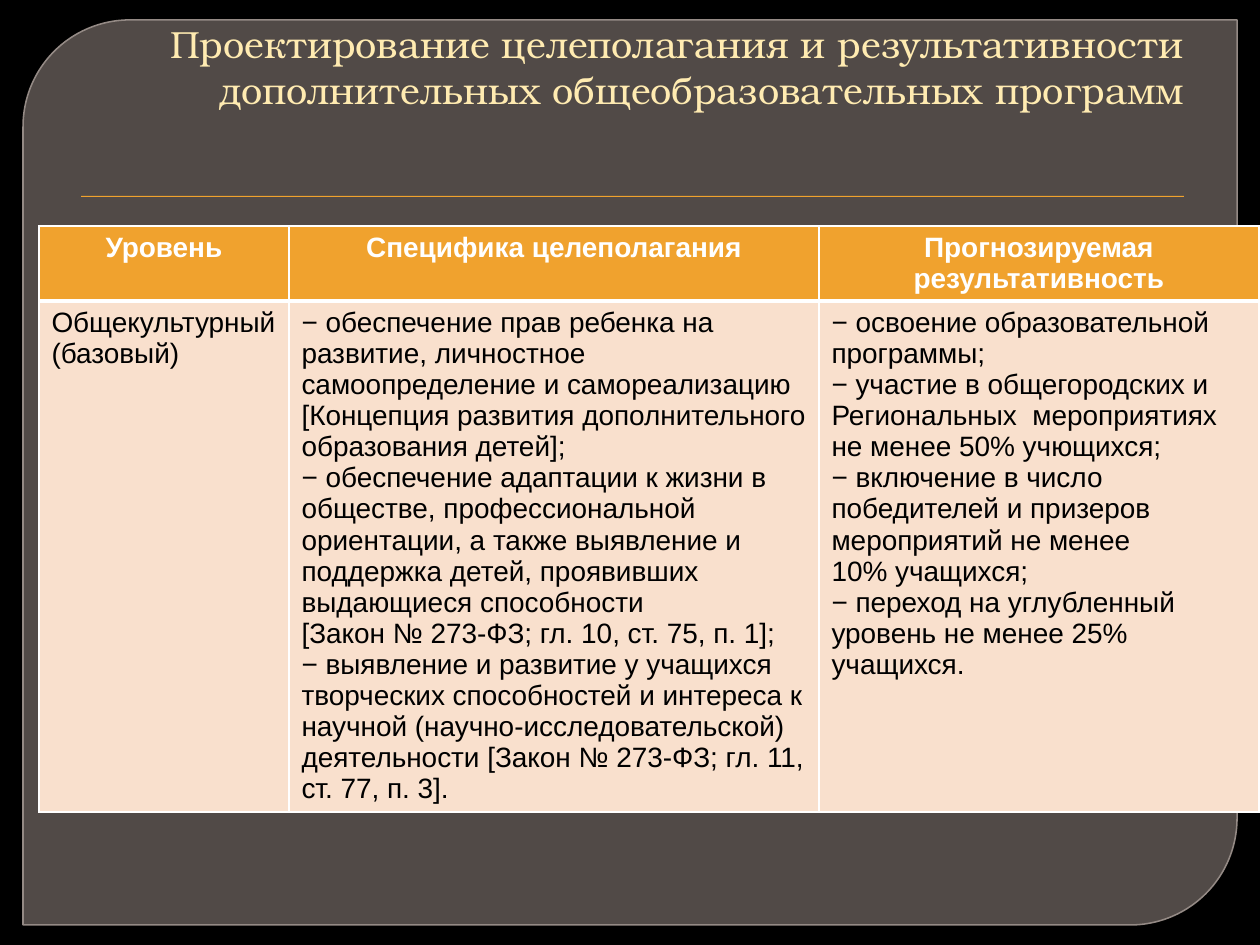
from lxml import etree
from pptx import Presentation
from pptx import util as u
from pptx.dml.color import RGBColor
from pptx.enum import shapes, text
from pptx.oxml.ns import qn

SCALE = 914400 / 126
WHITE = "FFFFFF"
ORANGE = "F0A22E"
PEACH = "F9E0CD"

TITLE = "Проектирование целеполагания и результативности дополнительных общеобразовательных программ"
HEADERS = ["Уровень", "Специфика целеполагания", "Прогнозируемая результативность"]
BODY = [
    ["Общекультурный", "(базовый)"],
    [
        "− обеспечение прав ребенка на развитие, личностное самоопределение и самореализацию "
        "[Концепция развития дополнительного образования детей];",
        "− обеспечение адаптации к жизни в",
        "обществе, профессиональной ориентации, а также выявление и поддержка детей, "
        "проявивших выдающиеся способности",
        "[Закон № 273-ФЗ; гл. 10, ст. 75, п. 1];",
        "− выявление и развитие у учащихся",
        "творческих способностей и интереса к научной (научно-исследовательской)",
        "деятельности [Закон № 273-ФЗ; гл. 11, ст. 77, п. 3].",
    ],
    [
        "− освоение образовательной программы;",
        "− участие в общегородских и",
        "Региональных  мероприятиях не менее 50% учющихся;",
        "− включение в число победителей и призеров мероприятий не менее",
        "10% учащихся;",
        "− переход на углубленный уровень не менее 25% учащихся.",
    ],
]


def px(length):
    return u.Emu(round(length * SCALE))


def color(value):
    return RGBColor.from_string(value)


def paint(target, value, alpha=None):
    target.fill.solid()
    target.fill.fore_color.rgb = color(value)
    if alpha is not None:
        add_alpha(target.fill.fore_color, target.element.spPr.find(qn("a:solidFill")), alpha)


def add_alpha(_, solid_fill, percent):
    etree.SubElement(solid_fill[0], qn("a:alpha"), val=str(percent * 1000))


def write(frame, lines, size=16, font="Arial", fill="000000", bold=False, align=text.PP_ALIGN.LEFT):
    for index, line in enumerate(lines):
        paragraph = frame.paragraphs[0] if index == 0 else frame.add_paragraph()
        paragraph.alignment = align
        run = paragraph.add_run()
        run.text = line
        run.font.size = u.Pt(size)
        run.font.name = font
        run.font.bold = bold
        run.font.color.rgb = color(fill)


def add_panel(slide):
    panel = slide.shapes.add_shape(
        shapes.MSO_SHAPE.ROUND_2_DIAG_RECTANGLE, px(23), px(20), px(1214), px(905))
    panel.adjustments[0] = 0.118
    panel.adjustments[1] = 0
    panel.shadow.inherit = False
    paint(panel, "7D726E", alpha=65)
    panel.line.color.rgb = color("948A85")
    panel.line.width = u.Pt(0.87)


def add_rule(slide):
    rule = slide.shapes.add_shape(shapes.MSO_SHAPE.RECTANGLE, px(81), px(196), px(1103), px(1))
    rule.shadow.inherit = False
    paint(rule, ORANGE)
    rule.line.fill.background()


def add_title(slide):
    title = slide.shapes.title
    title.left, title.top, title.width, title.height = px(63), px(35), px(1134), px(83)
    frame = title.text_frame
    frame.word_wrap = True
    frame.auto_size = text.MSO_AUTO_SIZE.NONE
    frame.vertical_anchor = text.MSO_ANCHOR.BOTTOM
    write(frame, [TITLE], size=21.6, font="TeX Gyre Bonum", fill="FFEBB1",
          align=text.PP_ALIGN.RIGHT)
    title.element.getparent().append(title.element)


def set_borders(cell, top=1, bottom=1):
    properties = cell._tc.get_or_add_tcPr()
    widths = {"lnL": 1, "lnR": 1, "lnT": top, "lnB": bottom}
    for index, (side, width) in enumerate(widths.items()):
        border = etree.Element(qn(f"a:{side}"), w=str(u.Pt(width)))
        fill = etree.SubElement(border, qn("a:solidFill"))
        etree.SubElement(fill, qn("a:srgbClr"), val=WHITE)
        properties.insert(index, border)


def add_levels_table(slide):
    widths, heights = [250, 530, 440], [74, 511]
    table = slide.shapes.add_table(
        2, 3, px(39), px(226), px(sum(widths)), px(sum(heights))).table
    for row, height in zip(table.rows, heights):
        row.height = px(height)
    for index, width in enumerate(widths):
        table.columns[index].width = px(width)
        header, body = table.cell(0, index), table.cell(1, index)
        paint(header, ORANGE)
        paint(body, PEACH)
        set_borders(header, bottom=3)
        set_borders(body, top=3)
        write(header.text_frame, [HEADERS[index]], fill=WHITE, bold=True,
              align=text.PP_ALIGN.CENTER)
        write(body.text_frame, BODY[index])


def main():
    presentation = Presentation()
    presentation.slide_width, presentation.slide_height = px(1260), px(945)
    slide = presentation.slides.add_slide(presentation.slide_layouts[5])
    paint(slide.background, "000000")
    add_panel(slide)
    add_rule(slide)
    add_title(slide)
    add_levels_table(slide)
    presentation.save("out.pptx")


if __name__ == "__main__":
    main()
